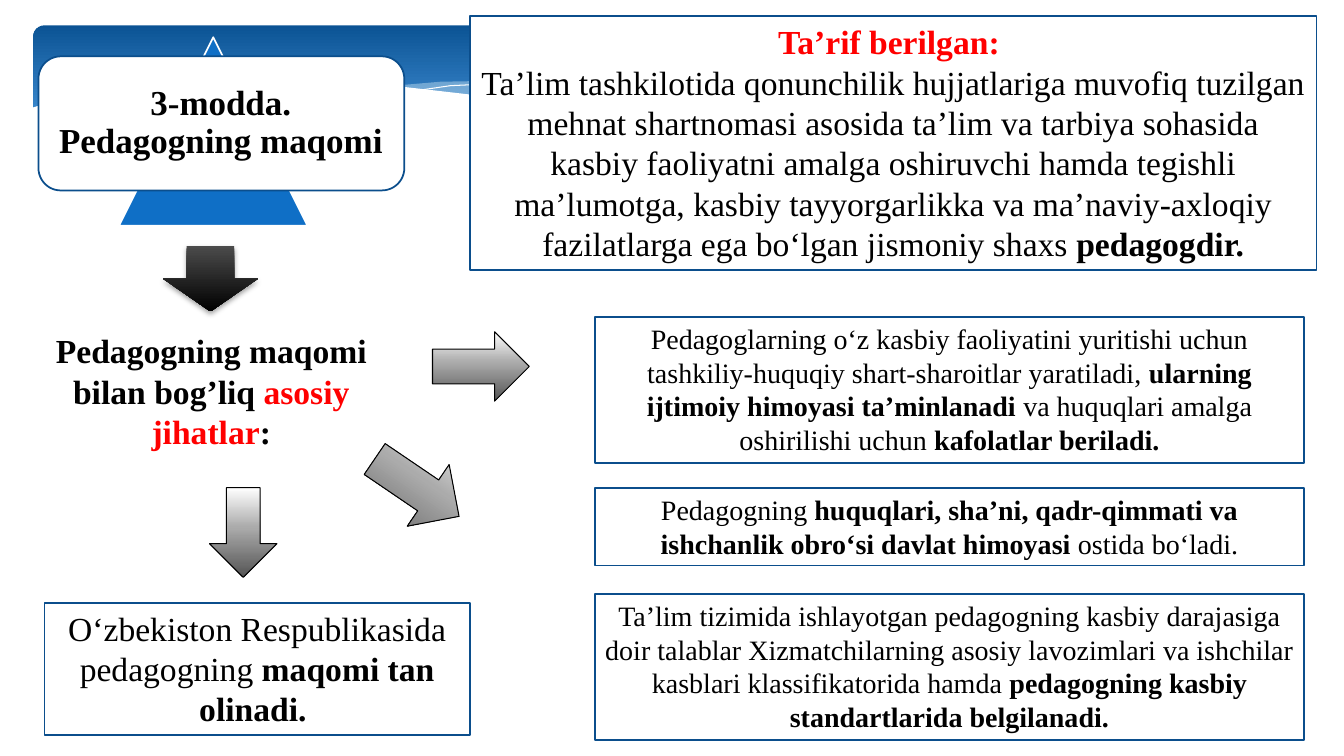
"""Builds the slide on Article 3, the status of the pedagogue."""
from dataclasses import dataclass
from typing import Optional

from lxml.etree import SubElement
from pptx import Presentation
from pptx.dml.color import RGBColor as Rgb
from pptx.enum.shapes import MSO_SHAPE as Preset
from pptx.enum.text import MSO_ANCHOR as Anchor, MSO_AUTO_SIZE as AutoSize, PP_ALIGN as Align
from pptx.oxml.ns import qn
from pptx.util import Cm, Pt

COLORS = {
    "white": "FFFFFF", "black": "000000", "red": "FF0000", "border": "0B4E8C",
    "triangle": "0F6FC6", "wave": "DBEFF9", "banner_top": "0B5394",
    "banner_end": "59AAF2", "charcoal": "4B4B4B", "silver": "ABABAB", "gray": "545454",
}
FONT = "Times New Roman"
METAL = ((0, "white"), (44, "silver"), (100, "gray"))
DARK = ((0, "charcoal"), (100, "black"))
BANNER = ((0, "banner_top"), (90, "banner_end"))


@dataclass(frozen=True)
class Area:
    left: float
    top: float
    width: float
    height: float

    def lengths(self) -> tuple:
        return tuple(Cm(v) for v in (self.left, self.top, self.width, self.height))


@dataclass(frozen=True)
class Piece:
    text: str
    bold: bool = False
    color: str = "black"


@dataclass(frozen=True)
class Statement:
    area: Area
    size: int
    paragraphs: tuple
    framed: bool = True


@dataclass(frozen=True)
class Arrow:
    preset: Preset
    area: Area
    stops: tuple = METAL
    edge: Optional[str] = "black"
    rotation: float = 0


@dataclass(frozen=True)
class Wave:
    points: tuple
    fill: Optional[str] = None
    opacity: int = 100


WAVES = (
    Wave(((30.23, 4.24), (26.26, 3.78), (21.31, 2.95), (18.31, 2.46), (15.72, 2.18),
          (12.85, 2.03), (11.1, 2.06), (9.7, 2.18), (11.58, 2.39), (13.69, 2.69),
          (16.61, 3.2), (20.37, 3.81), (24, 4.22), (27.33, 4.39)), "wave", 40),
    Wave(((10.46, 2.29), (11.35, 2.16), (13.11, 2.08), (15.88, 2.11), (18.85, 2.31),
          (22.5, 2.74), (25.76, 3.25), (30.73, 4.22))),
    Wave(((33.07, 3.58), (31.17, 4.04), (27.86, 4.34), (23.98, 4.19), (19.61, 3.66),
          (15.14, 2.9), (12.34, 2.44), (9.91, 2.16), (7.77, 2.01), (5.97, 1.98),
          (4.47, 2.06), (2.87, 2.21), (1.75, 2.44), (0.79, 2.72), (0.79, 5.69),
          (33.1, 5.69)), "white"),
)
ARTICLE = Statement(Area(1.12, 1.57, 8.89, 3.05), 25,
                    ((Piece("3-modda. Pedagogning maqomi", True),),), framed=False)
STATEMENTS = (
    Statement(Area(11.84, 0.41, 21.34, 6.4), 24, (
        (Piece("Ta’rif berilgan: ", True, "red"),),
        (Piece("Ta’lim tashkilotida qonunchilik hujjatlariga muvofiq tuzilgan mehnat "
               "shartnomasi asosida ta’lim va tarbiya sohasida kasbiy faoliyatni amalga "
               "oshiruvchi hamda tegishli ma’lumotga, kasbiy tayyorgarlikka va "
               "ma’naviy-axloqiy fazilatlarga ega bo‘lgan jismoniy shaxs "),
         Piece("pedagogdir.", True)))),
    Statement(Area(1.12, 8.2, 8.41, 3.33), 24, (
        (Piece("Pedagogning maqomi bilan bog’liq ", True),
         Piece("asosiy jihatlar", True, "red"), Piece(":", True)),), framed=False),
    Statement(Area(1.12, 15.19, 10.72, 3.33), 24, (
        (Piece("O‘zbekiston Respublikasida pedagogning "),
         Piece("maqomi tan olinadi. ", True)),)),
    Statement(Area(14.99, 7.98, 17.88, 3.68), 20, (
        (Piece("Pedagoglarning o‘z kasbiy faoliyatini yuritishi uchun "
               "tashkiliy-huquqiy shart-sharoitlar yaratiladi, "),
         Piece("ularning ijtimoiy himoyasi ta’minlanadi ", True),
         Piece("va huquqlari amalga oshirilishi uchun "),
         Piece("kafolatlar beriladi.", True)),)),
    Statement(Area(14.99, 12.29, 17.88, 1.96), 20, (
        (Piece("Pedagogning "),
         Piece("huquqlari, sha’ni, qadr-qimmati va ishchanlik obro‘si davlat himoyasi ", True),
         Piece("ostida bo‘ladi.")),)),
    Statement(Area(14.99, 14.96, 17.88, 3.68), 20, (
        (Piece("Ta’lim tizimida ishlayotgan pedagogning kasbiy darajasiga doir talablar "
               "Xizmatchilarning asosiy lavozimlari va ishchilar kasblari "
               "klassifikatorida hamda "),
         Piece("pedagogning kasbiy standartlarida belgilanadi.", True)),)),
)
STATUS_ARROW = Arrow(Preset.DOWN_ARROW, Area(4.11, 6.2, 2.39, 1.65), DARK, None)
ASPECT_ARROWS = (
    Arrow(Preset.RIGHT_ARROW, Area(10.9, 8.36, 2.44, 1.75)),
    Arrow(Preset.RIGHT_ARROW, Area(9.22, 11.35, 2.57, 1.88), rotation=34.2),
    Arrow(Preset.DOWN_ARROW, Area(5.28, 12.29, 1.7, 2.26)),
)


def style(shape, fill: Optional[str], edge: Optional[str], width: float = 1.25) -> None:
    shape.shadow.inherit = False
    if fill:
        shape.fill.solid()
        shape.fill.fore_color.rgb = Rgb.from_string(COLORS[fill])
    else:
        shape.fill.background()
    if edge:
        shape.line.color.rgb = Rgb.from_string(COLORS[edge])
        shape.line.width = Pt(width)
    else:
        shape.line.fill.background()


def add_preset(slide, preset: Preset, area: Area, fill: Optional[str],
               edge: Optional[str], width: float = 1.25):
    shape = slide.shapes.add_shape(preset, *area.lengths())
    style(shape, fill, edge, width)
    return shape


def shade(shape, stops: tuple) -> None:
    shape.fill.gradient()
    shape.fill.gradient_angle = 270
    stop_list = shape.element.spPr.find(qn("a:gradFill")).find(qn("a:gsLst"))
    stop_list.clear()
    for position, color in stops:
        stop = SubElement(stop_list, qn("a:gs"), pos=str(position * 1000))
        SubElement(stop, qn("a:srgbClr"), val=COLORS[color])


def add_wave(slide, wave: Wave) -> None:
    start, *rest = [(Cm(x), Cm(y)) for x, y in wave.points]
    builder = slide.shapes.build_freeform(*start)
    builder.add_line_segments(rest, close=wave.fill is not None)
    shape = builder.convert_to_shape()
    style(shape, wave.fill, None if wave.fill else "white", 0)
    if wave.opacity < 100:
        color = shape.element.spPr.find(qn("a:solidFill")).find(qn("a:srgbClr"))
        SubElement(color, qn("a:alpha"), val=str(wave.opacity * 1000))


def add_statement(slide, statement: Statement):
    if statement.framed:
        shape = add_preset(slide, Preset.RECTANGLE, statement.area, "white", "border")
    else:
        shape = slide.shapes.add_textbox(*statement.area.lengths())
    frame = shape.text_frame
    frame.word_wrap = True
    frame.auto_size = AutoSize.SHAPE_TO_FIT_TEXT
    frame.vertical_anchor = Anchor.TOP
    for index, pieces in enumerate(statement.paragraphs):
        paragraph = frame.add_paragraph() if index else frame.paragraphs[0]
        paragraph.alignment = Align.CENTER
        paragraph.text = pieces[0].text
        for piece in pieces[1:]:
            paragraph.add_run().text = piece.text
        for run, piece in zip(paragraph.runs, pieces):
            run.font.name, run.font.size = FONT, Pt(statement.size)
            run.font.bold = piece.bold
            run.font.color.rgb = Rgb.from_string(COLORS[piece.color])
    return shape


def add_arrow(slide, arrow: Arrow):
    shape = add_preset(slide, arrow.preset, arrow.area, None, arrow.edge, 0.75)
    shade(shape, arrow.stops)
    shape.rotation = arrow.rotation
    return shape


def add_article(slide) -> None:
    add_preset(slide, Preset.ISOSCELES_TRIANGLE, Area(3, 0.94, 4.75, 4.75), "triangle", "white")
    add_preset(slide, Preset.ROUNDED_RECTANGLE, Area(0.97, 1.42, 9.22, 3.38), "white", "border")
    frame = add_statement(slide, ARTICLE).text_frame
    frame.auto_size = AutoSize.NONE
    frame.vertical_anchor = Anchor.MIDDLE
    frame.paragraphs[0].line_spacing = 0.9


def main() -> None:
    deck = Presentation()
    deck.slide_width, deck.slide_height = Cm(33.87), Cm(19.05)
    slide = deck.slides.add_slide(deck.slide_layouts[6])
    banner = add_preset(slide, Preset.ROUNDED_RECTANGLE, Area(0.84, 0.64, 32.21, 3.96), None, None)
    banner.adjustments[0] = 0.07
    shade(banner, BANNER)
    for wave in WAVES:
        add_wave(slide, wave)
    add_article(slide)
    for statement in STATEMENTS:
        add_statement(slide, statement)
    status = add_arrow(slide, STATUS_ARROW)
    shadow = SubElement(status.element.spPr.find(qn("a:effectLst")), qn("a:outerShdw"),
                        blurRad=str(Pt(4)), dist=str(Pt(2)), dir="5400000", rotWithShape="0")
    shadow_color = SubElement(shadow, qn("a:srgbClr"), val=COLORS["black"])
    SubElement(shadow_color, qn("a:alpha"), val="38000")
    for arrow in ASPECT_ARROWS:
        add_arrow(slide, arrow)
    deck.save("out.pptx")


if __name__ == "__main__":
    main()
